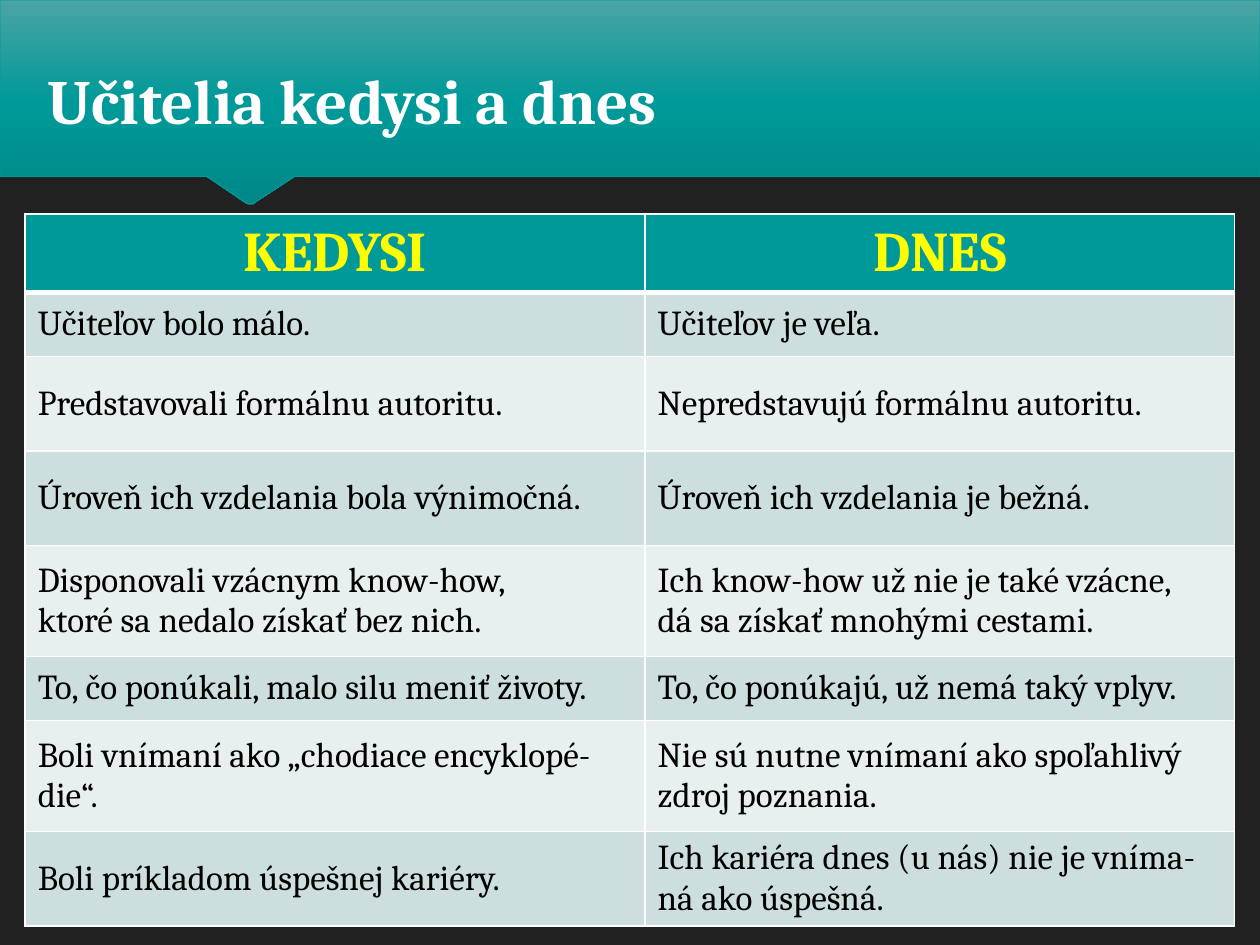
from copy import deepcopy
from dataclasses import dataclass

from lxml import etree
from pptx import Presentation
from pptx import util as u
from pptx.dml.color import RGBColor
from pptx.enum import text
from pptx.oxml import parse_xml
from pptx.oxml.ns import nsdecls, qn


@dataclass(frozen=True)
class Theme:
    font: str = "Cambria"
    background: str = "212121"
    teal: str = "009999"
    gradient: tuple = ("4BA4A4", "009999", "008888")
    white: str = "FFFFFF"
    black: str = "000000"
    yellow: str = "FFFF00"
    bands: tuple = ("CCDEDE", "E7EFEF")
    title_size: int = 36
    head_size: int = 32
    body_size: int = 20


theme = Theme()


def style_text(frame, size, color, bold):
    for para in frame.paragraphs:
        for span in para.runs:
            span.font.name = theme.font
            span.font.size = u.Pt(size)
            span.font.bold = bold
            span.font.color.rgb = RGBColor.from_string(color)


def set_borders(cell, bottom_width, top_width):
    """Draw white lines on all four sides; widths are in points."""
    properties = cell._tc.get_or_add_tcPr()
    for side, width in (("L", 1), ("R", 1), ("T", top_width), ("B", bottom_width)):
        properties.append(parse_xml(
            f'<a:ln{side} {nsdecls("a")} w="{u.Pt(width)}"><a:solidFill>'
            f'<a:srgbClr val="{theme.white}"/></a:solidFill></a:ln{side}>'))


deck = Presentation()
deck.slide_width, deck.slide_height = u.Inches(10), u.Inches(7.5)
page = deck.slides.add_slide(deck.slide_layouts[5])
page.background.fill.solid()
page.background.fill.fore_color.rgb = RGBColor.from_string(theme.background)

# Header band with a blunt pointer
outline = [(0, 0), (0, 1.4), (1.64, 1.4), (1.95, 1.61), (1.97, 1.62),
           (2.01, 1.62), (2.02, 1.61), (2.34, 1.4), (10, 1.4)]
builder = page.shapes.build_freeform(u.Inches(10), 0, scale=1.0)
builder.add_line_segments([(u.Inches(x), u.Inches(y)) for x, y in outline], close=True)
band = builder.convert_to_shape()
band.shadow.inherit = False
band.fill.gradient()
band.fill.gradient_angle = 270
stop_list = band._element.spPr.find(qn("a:gradFill")).find(qn("a:gsLst"))
stop_list.insert(1, deepcopy(stop_list[0]))
for stop, color, position in zip(band.fill.gradient_stops, theme.gradient, (0, 0.5, 1)):
    stop.color.rgb = RGBColor.from_string(color)
    stop.position = position
band.line.color.rgb = RGBColor.from_string(theme.teal)
band.line.width = u.Pt(0.5)

# Title, in front of the band
title = page.shapes.title
page.shapes._spTree.append(title._element)
title.left, title.top = u.Inches(0.28), u.Inches(0.44)
title.width, title.height = u.Inches(9.72), u.Inches(1.26)
frame = title.text_frame
frame.text = "Učitelia kedysi a dnes"
frame.word_wrap = True
frame.auto_size = text.MSO_AUTO_SIZE.NONE
frame.vertical_anchor = text.MSO_ANCHOR.TOP
frame.paragraphs[0].alignment = text.PP_ALIGN.LEFT
style_text(frame, theme.title_size, theme.white, True)
effects = parse_xml(
    f'<a:effectLst {nsdecls("a")}><a:outerShdw blurRad="38100" dist="38100" dir="2700000">'
    '<a:srgbClr val="000000"><a:alpha val="43000"/></a:srgbClr></a:outerShdw></a:effectLst>')
frame.paragraphs[0].runs[0].font._element.find(qn("a:solidFill")).addnext(effects)

# Comparison table; \v is a line break inside a paragraph
rows = [
    (0.62, "KEDYSI", "DNES"),
    (0.51, "Učiteľov bolo málo.", "Učiteľov je veľa."),
    (0.75, "Predstavovali formálnu autoritu.", "Nepredstavujú formálnu autoritu."),
    (0.75, "Úroveň ich vzdelania bola výnimočná.", "Úroveň ich vzdelania je bežná."),
    (0.88, "Disponovali vzácnym know-how,\vktoré sa nedalo získať bez nich.",
     "Ich know-how už nie je také vzácne,\vdá sa získať mnohými cestami."),
    (0.51, "To, čo ponúkali, malo silu meniť životy.", "To, čo ponúkajú, už nemá taký vplyv."),
    (0.88, "Boli vnímaní ako „chodiace encyklopé-die“.",
     "Nie sú nutne vnímaní ako spoľahlivý zdroj poznania."),
    (0.75, "Boli príkladom úspešnej kariéry.",
     "Ich kariéra dnes (u nás) nie je vníma-ná ako úspešná."),
]
table = page.shapes.add_table(len(rows), 2, u.Inches(0.2), u.Inches(1.7),
                              u.Inches(9.6), u.Inches(5.65)).table
for column, width in zip(table.columns, (4.92, 4.68)):
    column.width = u.Inches(width)

for index, (height, *words) in enumerate(rows):
    table.rows[index].height = u.Inches(height)
    is_head = index == 0
    for cell, wording in zip(table.rows[index].cells, words):
        cell.text_frame.text = wording
        cell.vertical_anchor = text.MSO_ANCHOR.MIDDLE
        set_borders(cell, 3 if is_head else 1, 3 if index == 1 else 1)
        cell.fill.solid()
        fill = theme.teal if is_head else theme.bands[(index - 1) % 2]
        cell.fill.fore_color.rgb = RGBColor.from_string(fill)
        if is_head:
            cell.text_frame.paragraphs[0].alignment = text.PP_ALIGN.CENTER
            style_text(cell.text_frame, theme.head_size, theme.yellow, True)
        else:
            style_text(cell.text_frame, theme.body_size, theme.black, False)
            for line_break in cell._tc.iter(qn("a:br")):
                etree.SubElement(line_break, qn("a:rPr"), sz=str(theme.body_size * 100))

deck.save("out.pptx")
